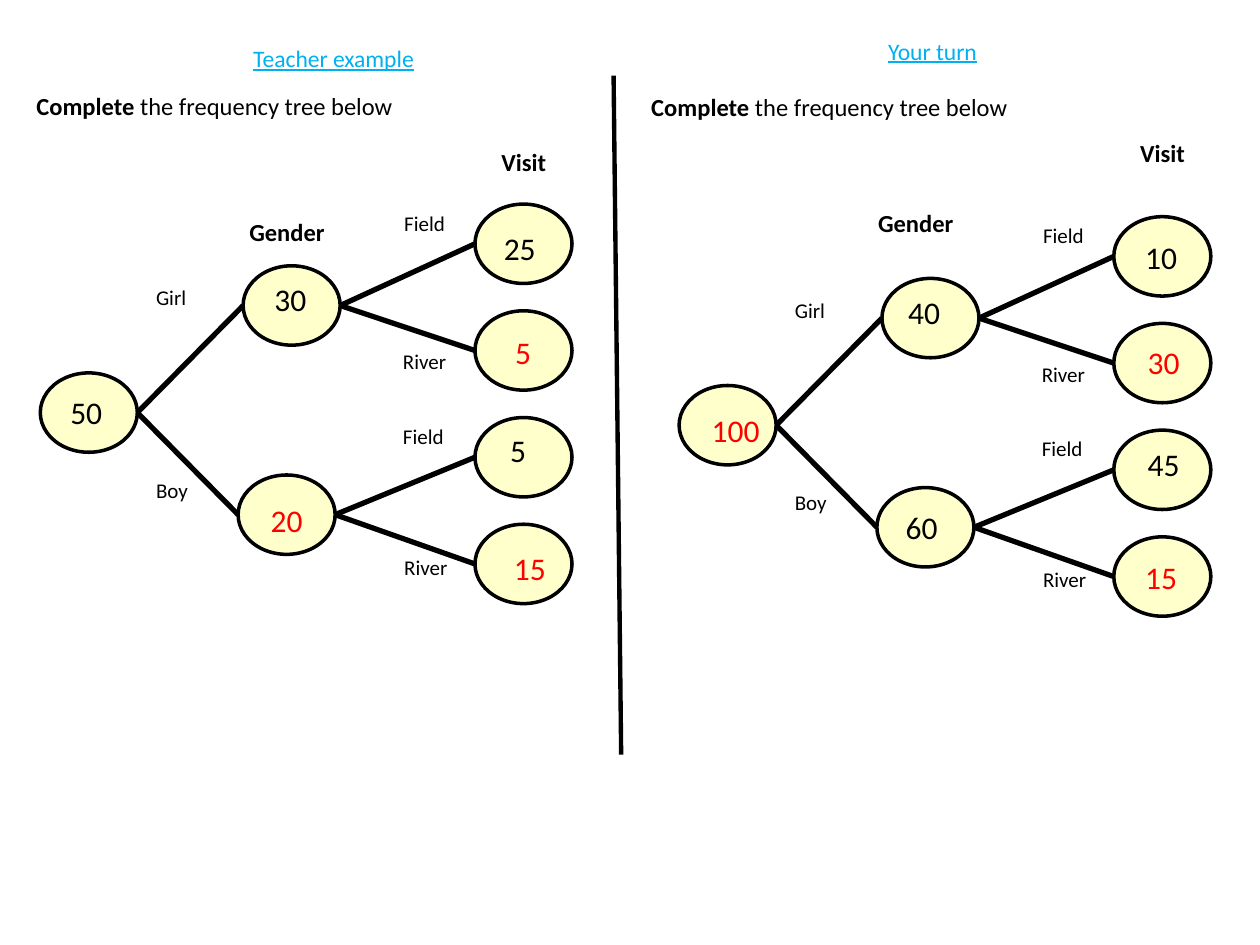
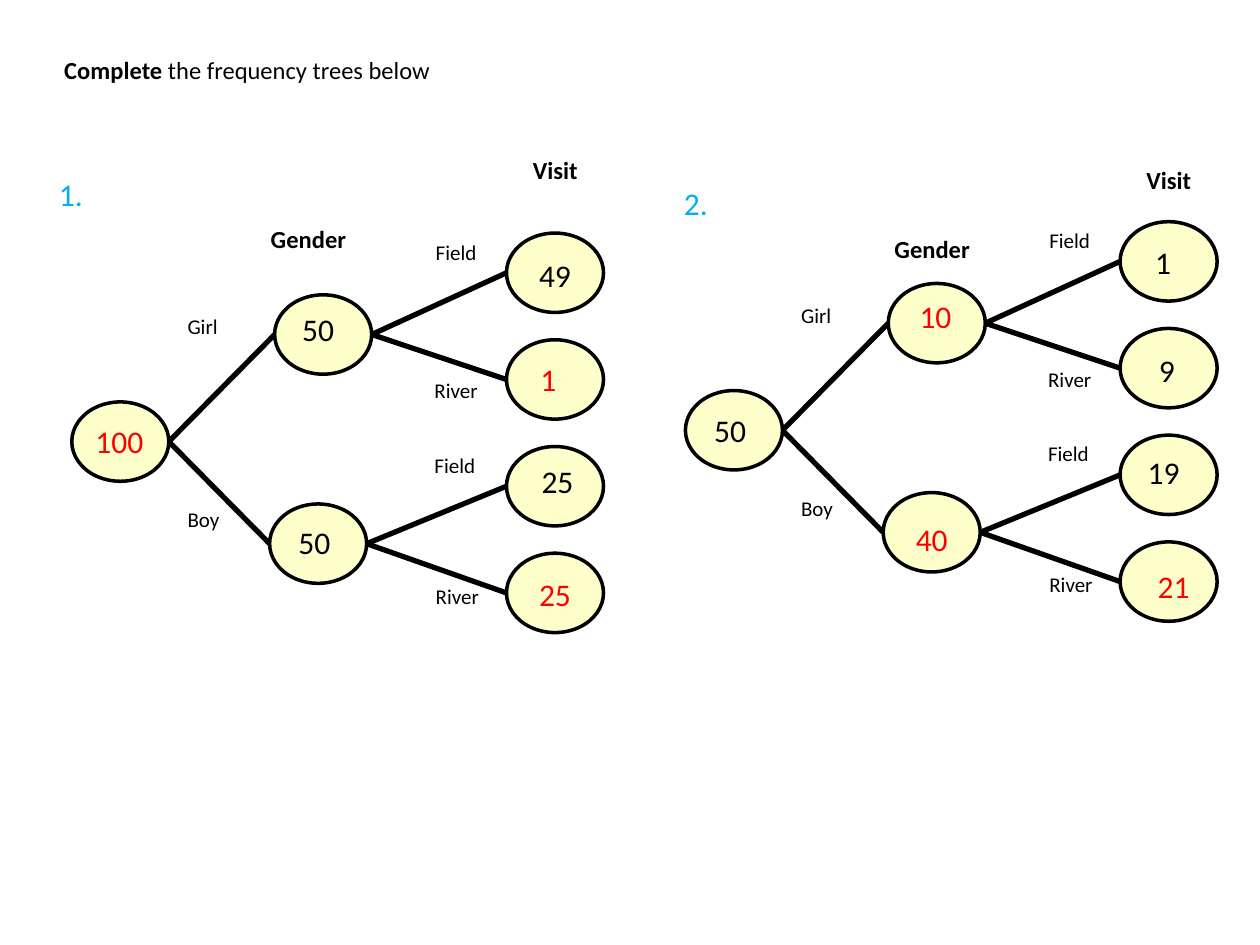
import collections

import lxml.etree
import pptx
import pptx.dml.color
import pptx.enum.shapes
import pptx.enum.text
import pptx.oxml.ns
import pptx.util

SLIDE_WIDTH = pptx.util.Inches(10)
SLIDE_HEIGHT = pptx.util.Inches(7.5)
COLUMN = SLIDE_WIDTH / 100
ROW = SLIDE_HEIGHT / 75
FONT = "Calibri"
COLORS = {"ink": "000000", "answer": "FF0000", "heading": "00B0F0", "node": "FFFFCC"}
TITLE_ONLY = 5

Box = collections.namedtuple("Box", "left top width height")
Number = collections.namedtuple("Number", "value right down color", defaults=["ink"])

NODE_WIDTH, NODE_HEIGHT = 7.7, 6.3
LEAF_LEFT, LEAF_PITCH = 34.5, 8.47
NODES = [(0, 13.4), (16.1, 4.9), (15.7, 21.5)]
NODES += [(LEAF_LEFT, LEAF_PITCH * row) for row in range(4)]
BRANCHES = [(0, 1), (0, 2), (1, 3), (1, 4), (2, 5), (2, 6)]
BRANCH_LABELS = [
    ("Girl", 8.2, 5.9), ("Boy", 8.2, 21.2),
    ("Field", 27.9, 0), ("River", 27.8, 11),
    ("Field", 27.8, 16.9), ("River", 27.9, 27.3),
]
LOW_HEADINGS = [("Gender", 15.6, 0.5), ("Visit", 35.6, -5)]
HIGH_HEADINGS = [("Gender", 14.8, -1.2), ("Visit", 35.6, -6.7)]

TEACHER_NUMBERS = [
    Number("50", 1.4, 1.1), Number("30", 1.5, 0.6), Number("20", 1.6, 1.6, "answer"),
    Number("25", 1.3, 1.5), Number("5", 2.2, 1.3, "answer"),
    Number("5", 1.8, 0.6), Number("15", 2.1, 1.5, "answer"),
]
PUPIL_NUMBERS = [
    Number("100", 1.6, 1.5, "answer"), Number("40", 1.1, 0.7), Number("60", 1.3, 1.1),
    Number("10", 1.5, 1.2), Number("30", 1.7, 1.1, "answer"),
    Number("45", 1.7, 0.7), Number("15", 1.5, 1.2, "answer"),
]
FIRST_NUMBERS = [
    Number("100", 0.9, 1.1, "answer"), Number("50", 1.2, 0.7), Number("50", 1.3, 1),
    Number("49", 1.6, 1.3), Number("1", 1.7, 1.1, "answer"),
    Number("25", 1.8, 0.7), Number("25", 1.6, 1.2, "answer"),
]
SECOND_NUMBERS = [
    Number("50", 1.3, 1.1), Number("10", 1.5, 0.6, "answer"),
    Number("40", 1.6, 1.7, "answer"),
    Number("1", 1.8, 1.2), Number("9", 2.1, 1.3),
    Number("19", 1.2, 0.9), Number("21", 2, 1.5, "answer"),
]


def rgb(name):
    return pptx.dml.color.RGBColor.from_string(COLORS[name])


def place(box):
    return (round(box.left * COLUMN), round(box.top * ROW),
            round(box.width * COLUMN), round(box.height * ROW))


def write(shape, box, text, size, color="ink", bold=False, underline=False, lead=""):
    shape.left, shape.top, shape.width, shape.height = place(box)
    frame = shape.text_frame
    frame.word_wrap = True
    frame.auto_size = pptx.enum.text.MSO_AUTO_SIZE.NONE
    frame.vertical_anchor = pptx.enum.text.MSO_ANCHOR.TOP
    paragraph = frame.paragraphs[0]
    paragraph.alignment = pptx.enum.text.PP_ALIGN.LEFT
    paragraph.line_spacing = 1
    paragraph.space_before = pptx.util.Pt(0)
    font = paragraph.font
    font.name, font.size = FONT, pptx.util.Pt(size)
    font.bold, font.underline = bold, underline
    font.color.rgb = rgb(color)
    if lead:
        lead_run = paragraph.add_run()
        lead_run.text = lead
        lead_run.font.bold = True
    paragraph.add_run().text = text


def add_text(slide, box, text, size, **style):
    write(slide.shapes.add_textbox(*place(box)), box, text, size, **style)


def add_line(slide, start, end, weight):
    start_x, start_y, end_x, end_y = place(Box(*start, *end))
    connector = slide.shapes.add_connector(
        pptx.enum.shapes.MSO_CONNECTOR.STRAIGHT, start_x, start_y, end_x, end_y)
    connector.line.color.rgb = rgb("ink")
    connector.line.width = pptx.util.Pt(weight)
    lxml.etree.SubElement(connector._element.spPr, pptx.oxml.ns.qn("a:effectLst"))


def add_node(slide, box, number):
    ellipse = slide.shapes.add_shape(pptx.enum.shapes.MSO_SHAPE.OVAL, *place(box))
    ellipse.shadow.inherit = False
    ellipse.fill.solid()
    ellipse.fill.fore_color.rgb = rgb("node")
    ellipse.line.color.rgb = rgb("ink")
    ellipse.line.width = pptx.util.Pt(2)
    number_box = Box(box.left + number.right, box.top + number.down, 6, 4)
    add_text(slide, number_box, number.value, 18, color=number.color)


def add_frequency_tree(slide, left, top, numbers, headings):
    nodes = [Box(left + x, top + y, NODE_WIDTH, NODE_HEIGHT) for x, y in NODES]
    for parent, child in BRANCHES:
        start, end = nodes[parent], nodes[child]
        add_line(slide, (start.left + start.width, start.top + start.height / 2),
                 (end.left, end.top + end.height / 2), 3)
    for box, number in zip(nodes, numbers):
        add_node(slide, box, number)
    for text, x, y in BRANCH_LABELS:
        add_text(slide, Box(left + x, top + y, 6.7, 3), text, 12)
    for text, x, y in headings:
        add_text(slide, Box(left + x, top + y, 10.5, 3.4), text, 14, bold=True)


def add_prompt(slide, left, top):
    add_text(slide, Box(left, top, 30.5, 3.4), " the frequency tree below", 14,
             lead="Complete")


def build_example_slide(slide):
    write(slide.shapes.title, Box(19.1, 3, 15.8, 3.3), "Teacher example", 13.5,
          color="heading", underline=True)
    add_text(slide, Box(69.5, 2.4, 15.8, 3.3), "Your turn", 13.5,
             color="heading", underline=True)
    add_line(slide, (48.7, 6), (49.3, 59.9), 2.5)
    add_prompt(slide, 1.9, 6.7)
    add_prompt(slide, 50.7, 6.8)
    add_frequency_tree(slide, 3.2, 16.2, TEACHER_NUMBERS, LOW_HEADINGS)
    add_frequency_tree(slide, 53.9, 17.2, PUPIL_NUMBERS, HIGH_HEADINGS)


def build_practice_slide(slide):
    write(slide.shapes.title, Box(4.1, 3.9, 31.3, 3.4), " the frequency trees below",
          14, lead="Complete")
    add_text(slide, Box(3.7, 13.4, 4, 4), "1.", 18, color="heading")
    add_text(slide, Box(53.3, 14.1, 4, 4), "2.", 18, color="heading")
    add_frequency_tree(slide, 5.7, 18.5, FIRST_NUMBERS, HIGH_HEADINGS)
    add_frequency_tree(slide, 54.4, 17.6, SECOND_NUMBERS, LOW_HEADINGS)


def main():
    presentation = pptx.Presentation()
    presentation.slide_width = SLIDE_WIDTH
    presentation.slide_height = SLIDE_HEIGHT
    layout = presentation.slide_layouts[TITLE_ONLY]
    for build in (build_example_slide, build_practice_slide):
        build(presentation.slides.add_slide(layout))
    presentation.save("out.pptx")


if __name__ == "__main__":
    main()
